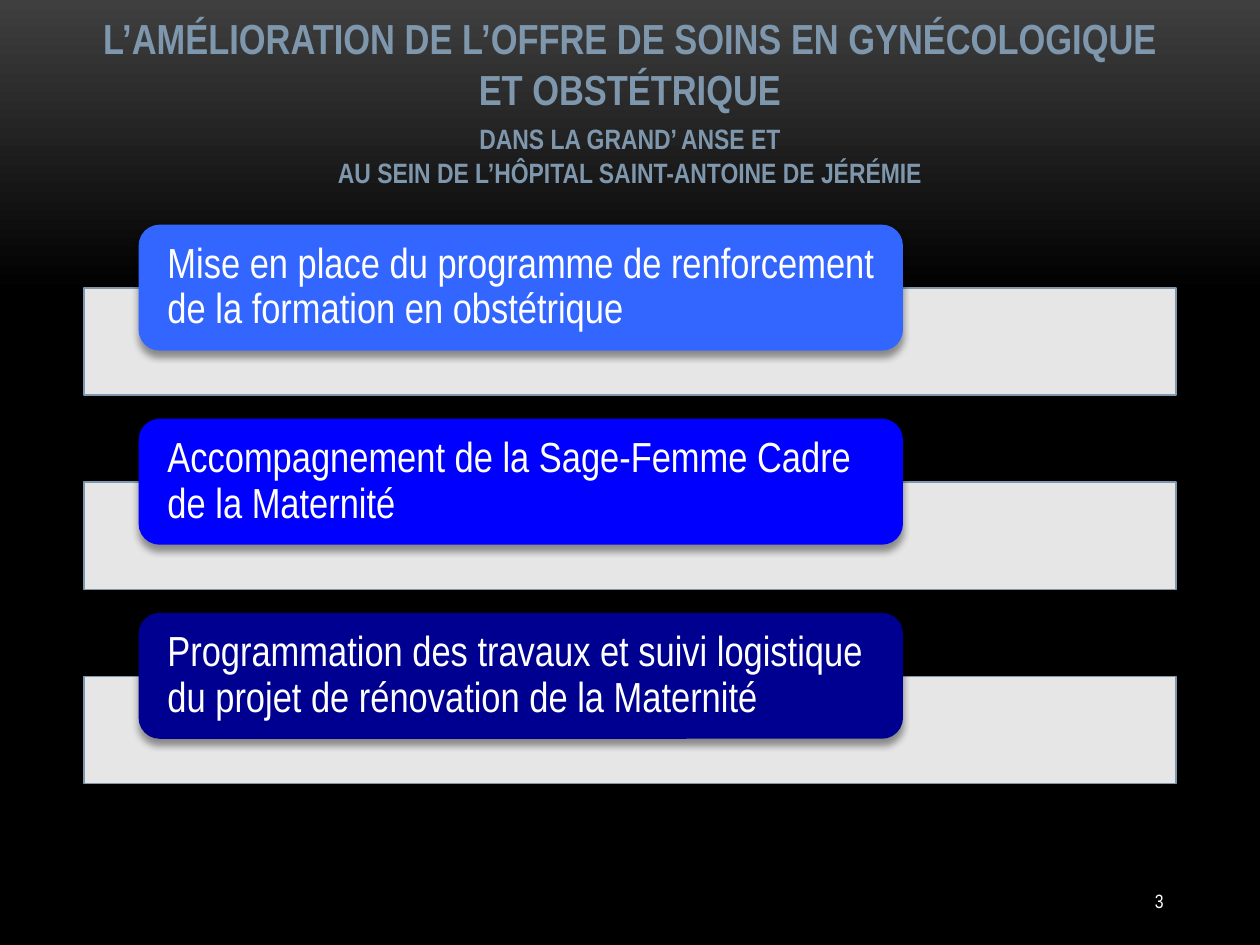
from dataclasses import dataclass

from lxml import etree
from pptx import Presentation
from pptx import util as u
from pptx.dml.color import RGBColor
from pptx.enum import shapes, text
from pptx.oxml import parse_xml
from pptx.oxml.ns import nsdecls, qn

FONT = "Arial Narrow"
COLOURS = {
    "sky": "3F3F3F",
    "ground": "000000",
    "heading": "7E97AD",
    "white": "FFFFFF",
    "light": "3366FF",
    "medium": "0000FF",
    "dark": "000090",
}
FIRST_TOP, PITCH, BAR_DROP = 128.4, 110.9, 36.2


@dataclass
class Action:
    wording: str
    colour: str


@dataclass
class Frame:
    left: float
    top: float
    width: float
    height: float

    def lengths(self) -> list:
        return [u.Pt(side) for side in (self.left, self.top, self.width, self.height)]


ACTIONS = [
    Action("Mise en place du programme de renforcement de la formation en obstétrique", "light"),
    Action("Accompagnement de la Sage-Femme Cadre de la Maternité", "medium"),
    Action("Programmation des travaux et suivi logistique du projet de rénovation de la Maternité", "dark"),
]


def colour(name: str) -> RGBColor:
    return RGBColor.from_string(COLOURS[name])


def format_para(para, size: float, tint: str, align, bold: bool = False) -> None:
    para.alignment = align
    for span in para.runs:
        span.font.name = FONT
        span.font.size = u.Pt(size)
        span.font.bold = bold
        span.font.color.rgb = colour(tint)


def add_text(page, frame: Frame, wording: str, anchor):
    box = page.shapes.add_textbox(*frame.lengths())
    box.text_frame.word_wrap = True
    box.text_frame.vertical_anchor = anchor
    box.text_frame.text = wording
    return box


def add_shape(page, kind, frame: Frame, fill: str):
    shape = page.shapes.add_shape(kind, *frame.lengths())
    shape.shadow.inherit = False
    shape.fill.solid()
    shape.fill.fore_color.rgb = colour(fill)
    return shape


def add_bar(page, top: float) -> None:
    bar = add_shape(page, shapes.MSO_SHAPE.RECTANGLE, Frame(48, top, 624, 61.2), "white")
    bar.line.color.rgb = colour("heading")
    bar.line.width = u.Pt(0.75)
    tint = bar.fill._xPr.find(qn("a:solidFill"))[0]
    etree.SubElement(tint, qn("a:alpha"), val="90000")


def add_card(page, top: float, action: Action) -> None:
    card = add_shape(page, shapes.MSO_SHAPE.ROUNDED_RECTANGLE,
                     Frame(79.2, top, 436.8, 72), action.colour)
    card.line.fill.background()
    # Soft shadow below the card
    effects = card._element.spPr.find(qn("a:effectLst"))
    effects.append(parse_xml(
        f'<a:outerShdw {nsdecls("a")} blurRad="{u.Pt(4)}" dist="{u.Pt(3.4)}" dir="5400000" '
        f'rotWithShape="0"><a:srgbClr val="{COLOURS["ground"]}"><a:alpha val="40000"/>'
        '</a:srgbClr></a:outerShdw>'))
    # The rounded corners already inset the text a little
    frame = card.text_frame
    frame.word_wrap = True
    frame.vertical_anchor = text.MSO_ANCHOR.MIDDLE
    frame.margin_left = frame.margin_right = u.Pt(13)
    frame.margin_top = frame.margin_bottom = 0
    frame.text = action.wording
    para = frame.paragraphs[0]
    para.line_spacing = 0.9
    format_para(para, 24, "white", text.PP_ALIGN.LEFT)


def main() -> None:
    deck = Presentation()
    deck.slide_width, deck.slide_height = u.Pt(720), u.Pt(540)
    page = deck.slides.add_slide(deck.slide_layouts[6])

    # Background fading to black
    backdrop = page.background.fill
    backdrop.gradient()
    backdrop.gradient_angle = 270
    for stop, position, name in zip(backdrop.gradient_stops, (0, 0.31), ("sky", "ground")):
        stop.position = position
        stop.color.rgb = colour(name)

    # Heading
    heading = add_text(page, Frame(48, 21.6, 624, 90),
                       "L’AMÉLIORATION DE L’OFFRE DE SOINS EN GYNÉCOLOGIQUE ET OBSTÉTRIQUE\n"
                       "DANS LA GRAND’ ANSE ET\vAU SEIN DE L’HÔPITAL SAINT-ANTOINE DE JÉRÉMIE",
                       text.MSO_ANCHOR.BOTTOM)
    for para, size in zip(heading.text_frame.paragraphs, (24, 16)):
        format_para(para, size, "heading", text.PP_ALIGN.CENTER, bold=True)
    heading.text_frame.paragraphs[1].space_before = u.Pt(4.8)

    # Actions, each a card over a pale bar
    for row, action in enumerate(ACTIONS):
        top = FIRST_TOP + row * PITCH
        add_bar(page, top + BAR_DROP)
        add_card(page, top, action)

    # Page number
    number = add_text(page, Frame(594, 500.4, 78, 28.8), "3", text.MSO_ANCHOR.MIDDLE)
    format_para(number.text_frame.paragraphs[0], 11, "white", text.PP_ALIGN.RIGHT)

    deck.save("out.pptx")


if __name__ == "__main__":
    main()
